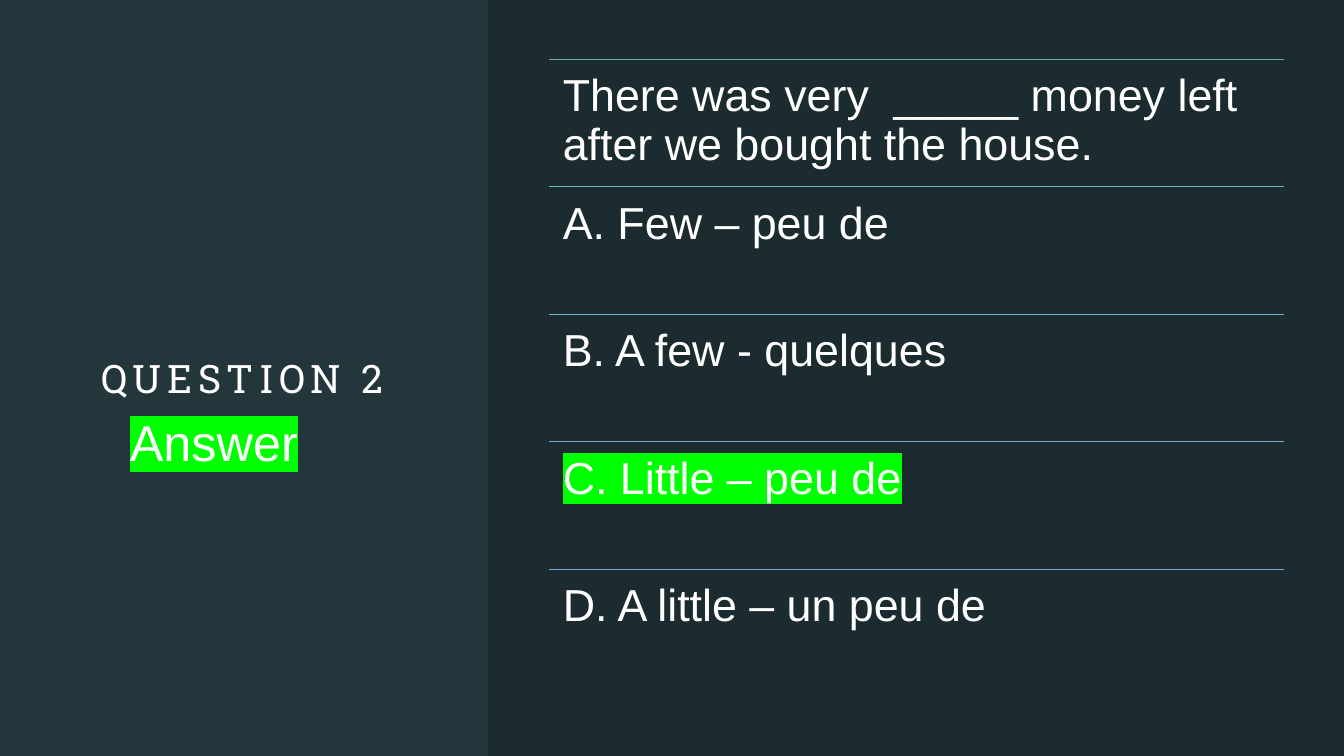
from dataclasses import dataclass

from lxml.etree import SubElement
from pptx import Presentation
from pptx.dml.color import RGBColor as Rgb
from pptx.enum.shapes import MSO_CONNECTOR as Connector, MSO_SHAPE as Preset
from pptx.enum.text import MSO_ANCHOR as Anchor, PP_ALIGN as Align
from pptx.oxml.ns import qn
from pptx.slide import Slide
from pptx.util import Pt

COLORS = {
    "background": "22363C",
    "panel": "000000",
    "text": "FFFFFF",
    "correct": "00FF00",
}
LIST_LEFT, LIST_TOP, LIST_WIDTH, ROW_HEIGHT = 392.4, 42.5, 524.9, 91.05


@dataclass
class Row:
    text: str
    rule_color: str
    correct: bool = False


@dataclass
class Label:
    text: str
    left: float
    top: float
    width: float
    height: float
    size: float
    font: str = "Arial"
    inset_x: float = 7.2
    inset_y: float = 3.6
    anchor: Anchor = Anchor.TOP
    align: Align = Align.LEFT
    line_spacing: float = 1.0
    tracking: int = 0
    highlighted: bool = False


ROWS = [
    Row("There was very  _____ money left after we bought the house.", "63AFA1"),
    Row("A. Few – peu de", "69BABC"),
    Row("B. A few - quelques", "70B3C8"),
    Row("C. Little – peu de", "78ABD2", correct=True),
    Row("D. A little – un peu de", "81A1DC"),
]


def color(name: str) -> Rgb:
    return Rgb.from_string(COLORS[name])


def add_label(slide: Slide, label: Label) -> None:
    shape = slide.shapes.add_textbox(
        Pt(label.left), Pt(label.top), Pt(label.width), Pt(label.height)
    )
    frame = shape.text_frame
    frame.word_wrap = True
    frame.vertical_anchor = label.anchor
    frame.margin_left = frame.margin_right = Pt(label.inset_x)
    frame.margin_top = frame.margin_bottom = Pt(label.inset_y)
    paragraph = frame.paragraphs[0]
    paragraph.alignment = label.align
    paragraph.line_spacing = label.line_spacing
    paragraph.font.name = label.font
    paragraph.font.size = Pt(label.size)
    paragraph.font.color.rgb = color("text")
    run = paragraph.add_run()
    run.text = label.text
    properties = run._r.get_or_add_rPr()
    if label.tracking:
        properties.set("spc", str(label.tracking * 100))
    if label.highlighted:
        highlight = SubElement(properties, qn("a:highlight"))
        SubElement(highlight, qn("a:srgbClr"), val=COLORS["correct"])


def add_panel(slide: Slide) -> None:
    shape = slide.shapes.add_shape(
        Preset.RECTANGLE, Pt(348.5), Pt(0), Pt(611.5), Pt(540)
    )
    shape.shadow.inherit = False
    shape.line.fill.background()
    shape.fill.solid()
    shape.fill.fore_color.rgb = color("panel")
    fill_color = shape._element.spPr.find(f".//{qn('a:srgbClr')}")
    SubElement(fill_color, qn("a:alpha"), val="20000")


def add_row(slide: Slide, row: Row, top: float) -> None:
    rule = slide.shapes.add_connector(
        Connector.STRAIGHT, Pt(LIST_LEFT), Pt(top), Pt(LIST_LEFT + LIST_WIDTH), Pt(top)
    )
    rule.line.color.rgb = Rgb.from_string(row.rule_color)
    rule.line.width = Pt(0.75)
    SubElement(rule._element.spPr, qn("a:effectLst"))
    add_label(
        slide,
        Label(
            row.text, LIST_LEFT, top, LIST_WIDTH, ROW_HEIGHT, 32,
            inset_x=9.6, inset_y=9.6, line_spacing=0.9, highlighted=row.correct,
        ),
    )


def main() -> None:
    presentation = Presentation()
    presentation.slide_width, presentation.slide_height = Pt(960), Pt(540)
    slide = presentation.slides.add_slide(presentation.slide_layouts[6])
    slide.background.fill.solid()
    slide.background.fill.fore_color.rgb = color("background")

    add_label(
        slide,
        Label(
            "QUESTION 2", 42.5, 85, 261.4, 369.4, 28, font="Roboto Slab",
            inset_x=0, inset_y=0, anchor=Anchor.MIDDLE, align=Align.CENTER, tracking=4,
        ),
    )
    add_panel(slide)
    for index, row in enumerate(ROWS):
        add_row(slide, row, LIST_TOP + index * ROW_HEIGHT)
    add_label(slide, Label("Answer", 85.7, 290.2, 159.1, 51.1, 36, highlighted=True))
    presentation.save("out.pptx")


if __name__ == "__main__":
    main()
